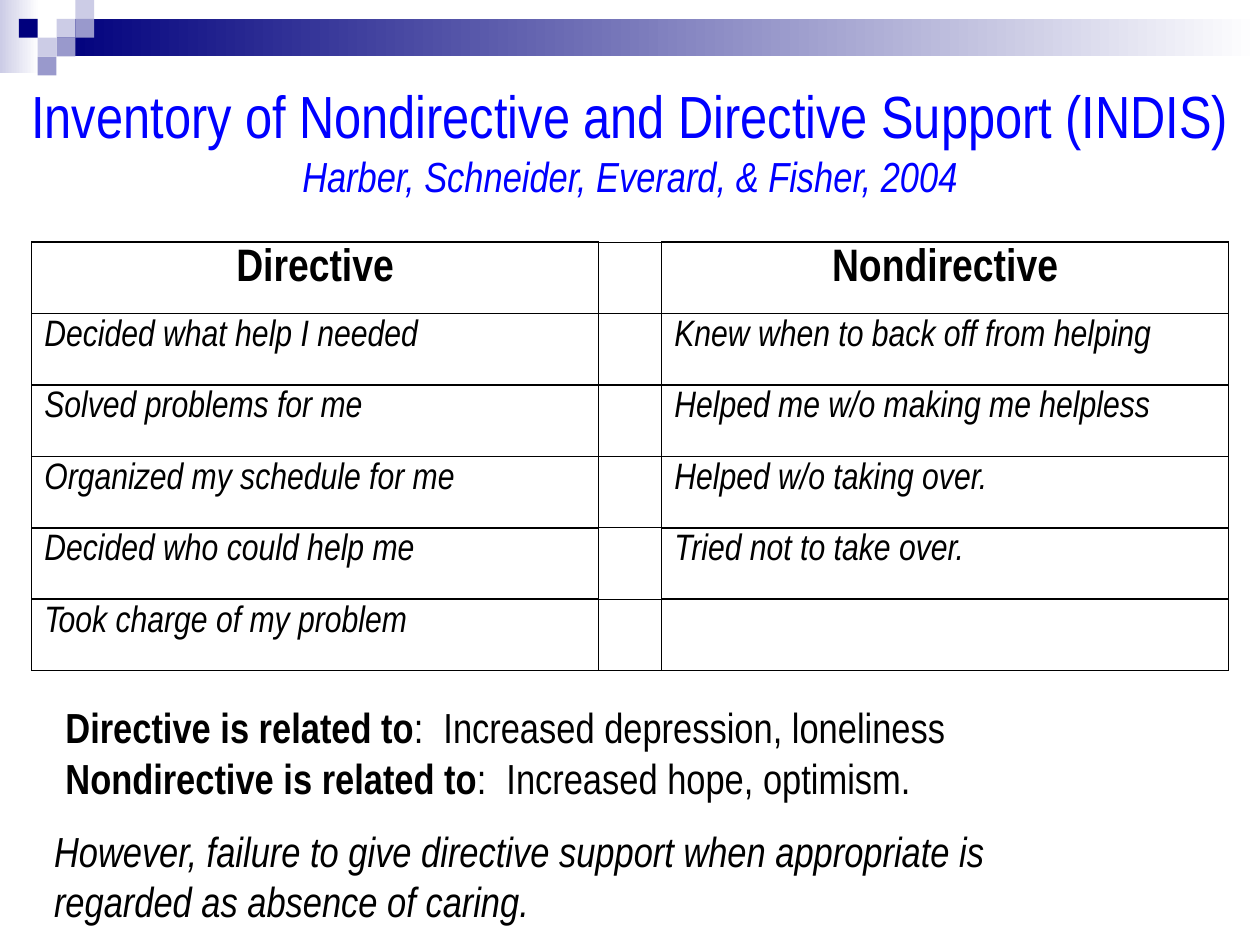
from pptx import Presentation
from pptx.dml.color import RGBColor
from pptx.enum.shapes import MSO_SHAPE
from pptx.enum.text import MSO_ANCHOR, MSO_AUTO_SIZE, PP_ALIGN
from pptx.oxml.ns import qn
from pptx.util import Cm, Pt
from lxml.etree import SubElement

FONT = "Arial Narrow"
COLORS = {
    "navy": "00007D",
    "mid": "9999CC",
    "pale": "CCCCE6",
    "white": "FFFFFF",
    "black": "000000",
    "title": "0000FF",
}
ROWS = [
    ("Directive", "", "Nondirective"),
    ("Decided what help I needed", "", "Knew when to back off from helping"),
    ("Solved problems for me", "", "Helped me w/o making me helpless"),
    ("Organized my schedule for me", "", "Helped w/o taking over."),
    ("Decided who could help me", "", "Tried not to take over."),
    ("Took charge of my problem", "", ""),
]


def rgb(name):
    return RGBColor.from_string(COLORS[name])


def style_run(run, size, color="black", bold=False, italic=False):
    font = run.font
    font.name, font.size = FONT, Pt(size)
    font.bold, font.italic = bold, italic
    font.color.rgb = rgb(color)


def add_block(slide, left, top, width, height, *colors):
    """Rectangle without outline: one colour is solid, two fade left to right."""
    shape = slide.shapes.add_shape(
        MSO_SHAPE.RECTANGLE, Cm(left), Cm(top), Cm(width), Cm(height))
    shape.shadow.inherit = False
    shape.line.fill.background()
    if len(colors) == 1:
        shape.fill.solid()
        shape.fill.fore_color.rgb = rgb(colors[0])
    else:
        shape.fill.gradient()
        shape.fill.gradient_angle = 0
        for stop, color in zip(shape.fill.gradient_stops, colors):
            stop.color.rgb = rgb(color)


def add_banner(slide, left, top, width):
    unit = 0.38
    add_block(slide, left, top, 0.79, 1.47, "pale", "white")
    add_block(slide, left + 3 * unit, top + unit, width - 3 * unit, 2 * unit, "navy", "white")
    # Squares on a grid of one unit: column, row, colour
    squares = [(3, 1, "pale"), (4, 0, "pale"), (4, 1, "mid"), (2, 2, "pale"),
               (1, 1, "navy"), (3, 2, "mid"), (2, 3, "mid")]
    for column, row, color in squares:
        add_block(slide, left + column * unit, top + row * unit, unit, unit, color)


def fill_title(slide, left, top, width, height):
    title = slide.shapes.title
    title.left, title.top, title.width, title.height = map(Cm, (left, top, width, height))
    frame = title.text_frame
    frame.text = ("Inventory of Nondirective and Directive Support (INDIS)\n"
                  "Harber, Schneider, Everard, & Fisher, 2004")
    frame.auto_size = MSO_AUTO_SIZE.NONE
    frame.vertical_anchor = MSO_ANCHOR.MIDDLE
    for paragraph, size, italic in zip(frame.paragraphs, (34, 24), (False, True)):
        paragraph.alignment = PP_ALIGN.CENTER
        style_run(paragraph.runs[0], size, "title", italic=italic)


def set_borders(cell, side_width, edge_width):
    properties = cell._tc.get_or_add_tcPr()
    widths = {"a:lnL": side_width, "a:lnR": side_width,
              "a:lnT": edge_width, "a:lnB": edge_width}
    for tag, width in widths.items():
        line = SubElement(properties, qn(tag), w=str(Pt(width)))
        fill = SubElement(line, qn("a:solidFill"))
        SubElement(fill, qn("a:srgbClr"), val=COLORS["black"])


def add_support_table(slide, left, top, width, height):
    gap = 1.27
    side = (width - gap) / 2
    table = slide.shapes.add_table(
        len(ROWS), 3, Cm(left), Cm(top), Cm(width), Cm(height)).table
    table.first_row = table.horz_banding = False
    for column, column_width in zip(table.columns, (side, gap, side)):
        column.width = Cm(column_width)
    for row_index, texts in enumerate(ROWS):
        table.rows[row_index].height = Cm(height / len(ROWS))
        header = row_index == 0
        for column_index, text in enumerate(texts):
            cell = table.cell(row_index, column_index)
            set_borders(cell, 1, 0.75 if column_index == 1 else 1)
            cell.fill.background()
            if text:
                cell.text = text
                paragraph = cell.text_frame.paragraphs[0]
                paragraph.alignment = PP_ALIGN.CENTER if header else PP_ALIGN.LEFT
                style_run(paragraph.runs[0], 26 if header else 21,
                          bold=header, italic=not header)


def add_text_box(slide, left, top, width, height):
    frame = slide.shapes.add_textbox(Cm(left), Cm(top), Cm(width), Cm(height)).text_frame
    frame.word_wrap = True
    return frame


def add_findings(slide, left, top, width, height):
    frame = add_text_box(slide, left, top, width, height)
    findings = [("Directive is related to", ": \tIncreased depression, loneliness"),
                ("Nondirective is related to", ": \tIncreased hope, optimism.")]
    frame.text = "\n".join(label for label, _ in findings)
    for paragraph, (_, effect) in zip(frame.paragraphs, findings):
        style_run(paragraph.runs[0], 24, bold=True)
        run = paragraph.add_run()
        run.text = effect
        style_run(run, 24)


def add_caveat(slide, left, top, width, height):
    frame = add_text_box(slide, left, top, width, height)
    frame.text = ("However, failure to give directive support when appropriate is "
                  "regarded as absence of caring.")
    style_run(frame.paragraphs[0].runs[0], 24, italic=True)


def main():
    presentation = Presentation()
    presentation.slide_width, presentation.slide_height = Cm(25.4), Cm(19.05)
    slide = presentation.slides.add_slide(presentation.slide_layouts[5])
    add_banner(slide, 0, 0, 25.4)
    fill_title(slide, 0, 1.47, 25.4, 2.72)
    add_support_table(slide, 0.64, 4.88, 24.13, 8.64)
    add_findings(slide, 1.07, 14.02, 23.06, 2.29)
    add_caveat(slide, 0.84, 16.51, 21.39, 2.31)
    presentation.save("out.pptx")


if __name__ == "__main__":
    main()
